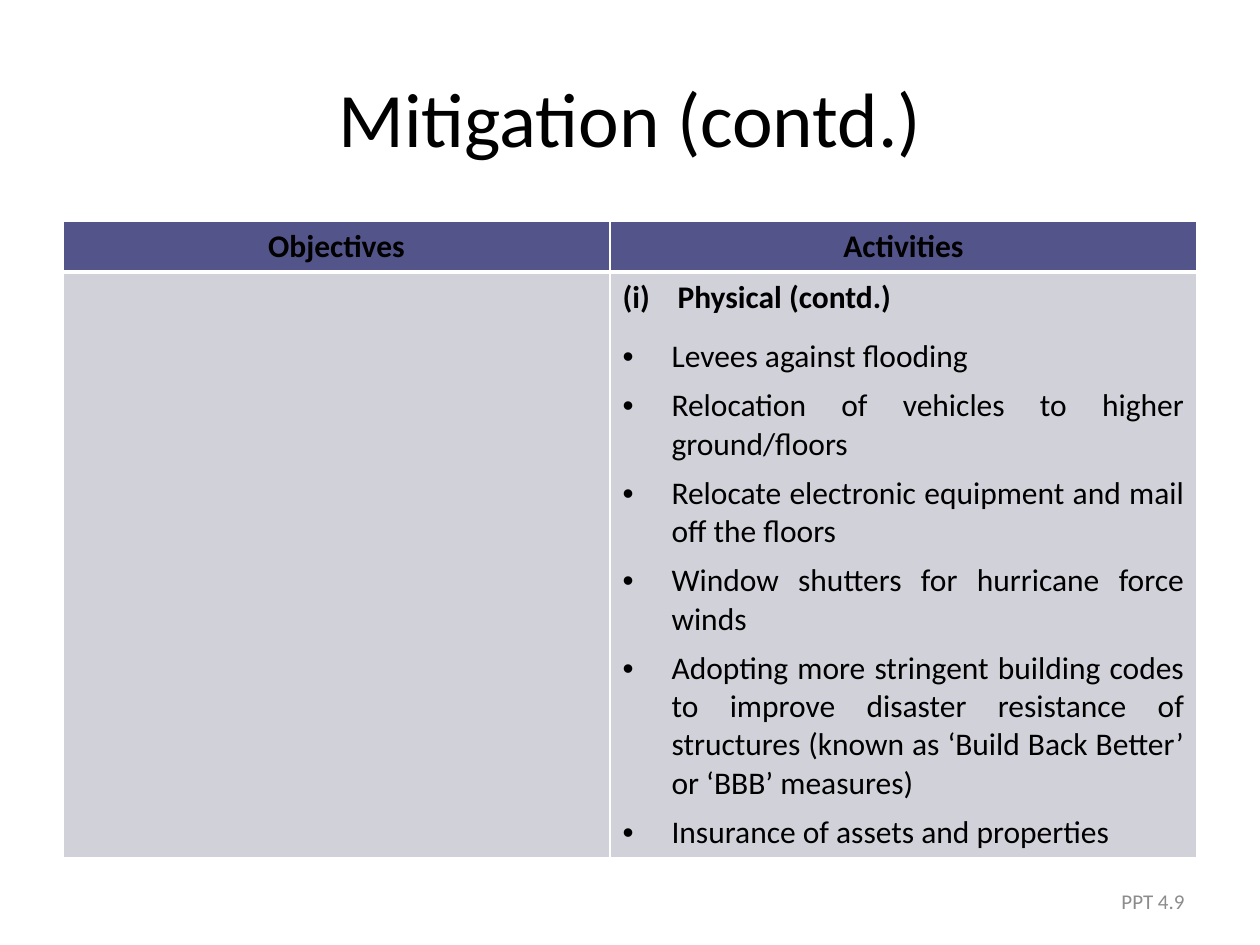
from lxml import etree
from pptx import Presentation
from pptx.dml.color import RGBColor
from pptx.enum.text import MSO_ANCHOR, PP_ALIGN
from pptx.oxml.ns import qn
from pptx.util import Pt

PX = 914400 / 126
MIDDLE = MSO_ANCHOR.MIDDLE
LEFT, CENTER, RIGHT, JUSTIFY = PP_ALIGN.LEFT, PP_ALIGN.CENTER, PP_ALIGN.RIGHT, PP_ALIGN.JUSTIFY
BLACK = RGBColor(0x00, 0x00, 0x00)
WHITE = RGBColor(0xFF, 0xFF, 0xFF)
GREY = RGBColor(0x8C, 0x8C, 0x8C)
INDIGO = RGBColor(0x53, 0x54, 0x8A)
LAVENDER = RGBColor(0xD1, 0xD1, 0xDA)

HEADINGS = ["Objectives", "Activities"]
ACTIVITIES = [
    "Levees against flooding",
    "Relocation of vehicles to higher ground/floors",
    "Relocate electronic equipment and mail off the floors",
    "Window shutters for hurricane force winds",
    "Adopting more stringent building codes to improve disaster resistance of "
    "structures (known as ‘Build Back Better’ or ‘BBB’ measures)",
    "Insurance of assets and properties",
]


def px(length):
    return round(length * PX)


def write(para, text, size, align, color=BLACK, bold=False, after=0):
    para.alignment = align
    para.space_after = Pt(after)
    span = para.add_run()
    span.text = text
    for name, value in {"name": "Calibri", "size": Pt(size), "bold": bold}.items():
        setattr(span.font, name, value)
    span.font.color.rgb = color


deck = Presentation()
deck.slide_width, deck.slide_height = px(1260), px(945)
page = deck.slides.add_slide(deck.slide_layouts[5])

# Title
title = page.shapes.title
for name, value in {"left": 63, "top": 38, "width": 1134, "height": 157}.items():
    setattr(title, name, px(value))
title.text_frame.vertical_anchor = MIDDLE
write(title.text_frame.paragraphs[0], "Mitigation (contd.)", 44, CENTER)

# Table grid
table = page.shapes.add_table(2, 2, px(63), px(221), px(1134), px(636)).table
for column, width in zip(table.columns, [547, 587]):
    column.width = px(width)
for row, height in zip(table.rows, [51, 585]):
    row.height = px(height)

# Cell borders and fills; the rule under the header is thicker
for index, (fill, top, bottom) in enumerate([(INDIGO, 1, 3), (LAVENDER, 3, 1)]):
    for cell in table.rows[index].cells:
        properties = cell._tc.get_or_add_tcPr()
        for side, width in {"L": 1, "R": 1, "T": top, "B": bottom}.items():
            line = etree.SubElement(properties, qn(f"a:ln{side}"), w=str(Pt(width)))
            solid = etree.SubElement(line, qn("a:solidFill"))
            etree.SubElement(solid, qn("a:srgbClr"), val=str(WHITE))
        cell.fill.solid()
        cell.fill.fore_color.rgb = fill

# Header row
for cell, heading in zip(table.rows[0].cells, HEADINGS):
    write(cell.text_frame.paragraphs[0], heading, 18, CENTER, bold=True, after=12)

# Activities: a numbered heading, then bullets
frame = table.cell(1, 1).text_frame
write(frame.paragraphs[0], "Physical (contd.)", 18, LEFT, bold=True, after=12)
for activity in ACTIVITIES:
    write(frame.add_paragraph(), activity, 18, JUSTIFY, after=6)
for index, para in enumerate(frame.paragraphs):
    properties = para._p.get_or_add_pPr()
    indent = px(49 if index else 55)
    properties.set("marL", str(indent))
    properties.set("indent", str(-indent))
    if index:
        etree.SubElement(properties, qn("a:buFont"), typeface="Arial")
        etree.SubElement(properties, qn("a:buChar"), char="•")
    else:
        etree.SubElement(properties, qn("a:buAutoNum"), type="romanLcParenBoth")

# Page label
box = page.shapes.add_textbox(px(903), px(876), px(294), px(50))
box.text_frame.word_wrap = True
box.text_frame.vertical_anchor = MIDDLE
write(box.text_frame.paragraphs[0], "PPT 4.9", 12, RIGHT, color=GREY)

deck.save("out.pptx")
